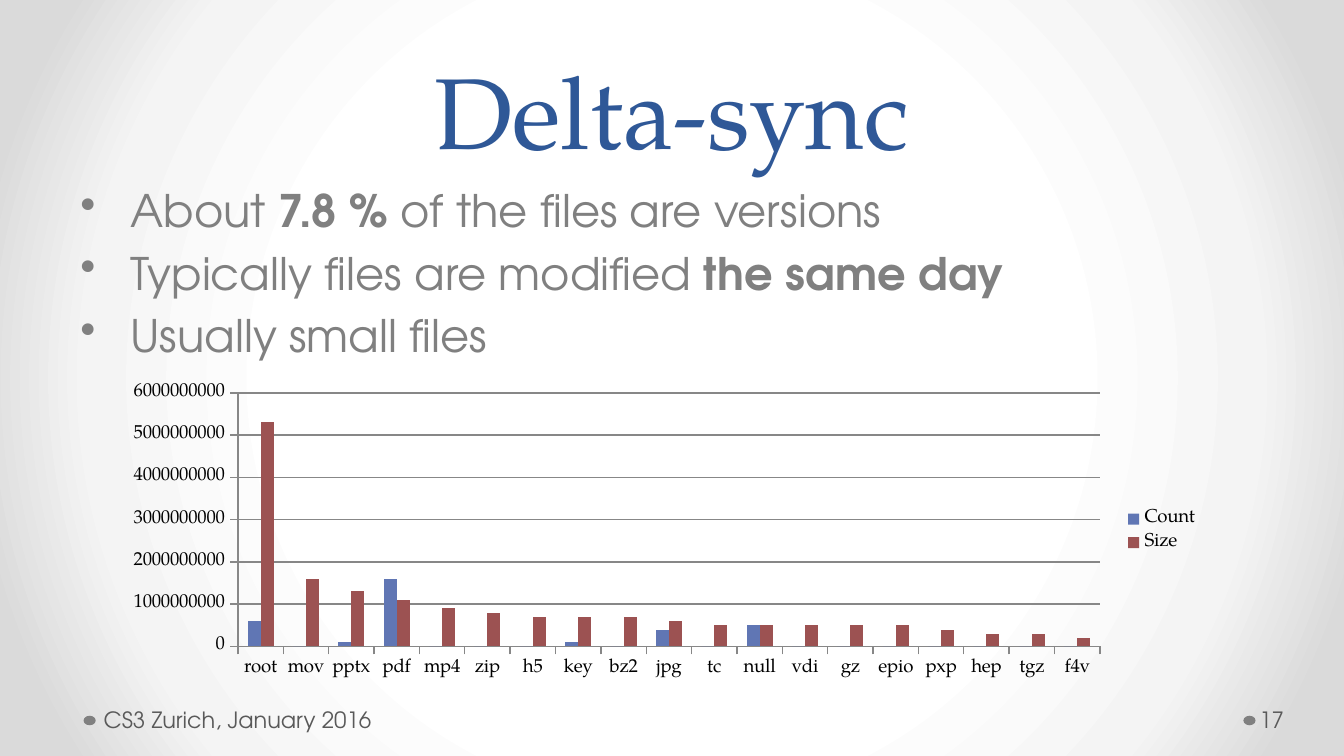
from dataclasses import dataclass

from lxml.etree import SubElement
from pptx import Presentation
from pptx.chart.data import CategoryChartData
from pptx.dml.color import RGBColor
from pptx.enum.chart import XL_CHART_TYPE, XL_LEGEND_POSITION, XL_TICK_MARK
from pptx.enum.shapes import MSO_SHAPE
from pptx.enum.text import MSO_ANCHOR, PP_ALIGN
from pptx.oxml.ns import qn
from pptx.util import Cm, Pt

COLORS = {
    "title": "2F5897", "body": "808080", "footer": "595959", "axis": "878787",
    "black": "000000", "count": "6076B4", "size": "9C5252",
}
BACKGROUND_STOPS = [(50, "FFFFFF"), (76, "F4F4F4"), (92, "DADADA")]
SERIF, SANS = "TeX Gyre Pagella", "TeX Gyre Adventor"
INDENT = Cm(0.95)

# Each bullet is a list of (text, bold) pieces.
BULLETS = [
    [("About ", False), ("7.8 %", True), (" of the files are versions", False)],
    [("Typically files are modified ", False), ("the same day", True)],
    [("Usually small files", False)],
]


@dataclass(frozen=True)
class Box:
    left: float
    top: float
    width: float
    height: float

    def lengths(self):
        return Cm(self.left), Cm(self.top), Cm(self.width), Cm(self.height)


@dataclass(frozen=True)
class FileType:
    """Count and size of one file type, in units of 100 million."""
    name: str
    count: int
    size: int


FILE_TYPES = [
    FileType("root", 6, 53), FileType("mov", 0, 16), FileType("pptx", 1, 13),
    FileType("pdf", 16, 11), FileType("mp4", 0, 9), FileType("zip", 0, 8),
    FileType("h5", 0, 7), FileType("key", 1, 7), FileType("bz2", 0, 7),
    FileType("jpg", 4, 6), FileType("tc", 0, 5), FileType("null", 5, 5),
    FileType("vdi", 0, 5), FileType("gz", 0, 5), FileType("epio", 0, 5),
    FileType("pxp", 0, 4), FileType("hep", 0, 3), FileType("tgz", 0, 3),
    FileType("f4v", 0, 2),
]
VALUE_UNIT = 100_000_000


def rgb(name: str) -> RGBColor:
    return RGBColor.from_string(COLORS[name])


def paint_background(slide) -> None:
    """Fill the background with a radial gradient around the centre."""
    slide.background.fill.gradient()
    gradient = next(slide.element.iter(qn("a:gradFill")))
    for child in list(gradient):
        gradient.remove(child)
    stops = SubElement(gradient, qn("a:gsLst"))
    for position, color in BACKGROUND_STOPS:
        stop = SubElement(stops, qn("a:gs"), pos=str(position * 1000))
        SubElement(stop, qn("a:srgbClr"), val=color)
    circle = SubElement(gradient, qn("a:path"), {"path": "circle"})
    SubElement(circle, qn("a:fillToRect"),
               {side: "50000" for side in ("l", "t", "r", "b")})


def add_bullet(paragraph) -> None:
    properties = paragraph._p.get_or_add_pPr()
    properties.set("marL", str(INDENT))
    properties.set("indent", str(-INDENT))
    SubElement(properties, qn("a:buChar"), char="•")


def add_text(slide, box: Box, paragraphs: list, *, size: int, font: str,
             color: str, align=PP_ALIGN.LEFT, anchor=MSO_ANCHOR.TOP,
             margins=(0.25, 0.25), line_spacing=None, space_before=None,
             bullets=False) -> None:
    """Add a text box; paragraphs are lists of (text, bold) pieces."""
    frame = slide.shapes.add_textbox(*box.lengths()).text_frame
    frame.word_wrap = True
    frame.vertical_anchor = anchor
    frame.margin_left, frame.margin_right = (Cm(margin) for margin in margins)
    for index, pieces in enumerate(paragraphs):
        paragraph = frame.add_paragraph() if index else frame.paragraphs[0]
        paragraph.alignment = align
        paragraph.line_spacing = line_spacing
        paragraph.space_before = space_before
        if bullets:
            add_bullet(paragraph)
        for text, bold in pieces:
            run = paragraph.add_run()
            run.text = text
            run.font.size, run.font.name, run.font.bold = Pt(size), font, bold
            run.font.color.rgb = rgb(color)


def add_dot(slide, left: float) -> None:
    box = Box(left, 13.53, 0.23, 0.18)
    shape = slide.shapes.add_shape(MSO_SHAPE.OVAL, *box.lengths())
    shape.shadow.inherit = False
    shape.fill.solid()
    shape.fill.fore_color.rgb = rgb("body")
    shape.line.fill.background()


def add_file_chart(slide, box: Box) -> None:
    data = CategoryChartData(number_format="0")
    data.categories = [file_type.name for file_type in FILE_TYPES]
    data.add_series("Count", [item.count * VALUE_UNIT for item in FILE_TYPES])
    data.add_series("Size", [item.size * VALUE_UNIT for item in FILE_TYPES])
    chart = slide.shapes.add_chart(
        XL_CHART_TYPE.COLUMN_CLUSTERED, *box.lengths(), data).chart
    chart.has_title = False
    chart.font.size, chart.font.name = Pt(10), SERIF
    chart.font.color.rgb = rgb("black")
    chart.has_legend = True
    chart.legend.position = XL_LEGEND_POSITION.RIGHT
    chart.legend.include_in_layout = False

    plot = chart.plots[0]
    plot.gap_width, plot.overlap = 150, 0
    plot.vary_by_categories = False
    for series, color in zip(plot.series, ("count", "size")):
        series.format.fill.solid()
        series.format.fill.fore_color.rgb = rgb(color)

    value_axis = chart.value_axis
    value_axis.minimum_scale, value_axis.maximum_scale = 0, 60 * VALUE_UNIT
    value_axis.major_unit = 10 * VALUE_UNIT
    value_axis.has_major_gridlines = True
    for axis in (chart.category_axis, value_axis):
        axis.major_tick_mark = XL_TICK_MARK.OUTSIDE
        axis.minor_tick_mark = XL_TICK_MARK.NONE
    for line in (chart.category_axis.format.line, value_axis.format.line,
                 value_axis.major_gridlines.format.line):
        line.color.rgb = rgb("axis")
        line.width = Pt(0.75)


def main() -> None:
    presentation = Presentation()
    presentation.slide_width, presentation.slide_height = Cm(25.4), Cm(14.29)
    slide = presentation.slides.add_slide(presentation.slide_layouts[6])
    paint_background(slide)
    for left in (23.5, 1.58):
        add_dot(slide, left)
    add_text(slide, Box(1.27, 0, 22.86, 3.33), [[("Delta-sync", False)]],
             size=54, font=SERIF, color="title", align=PP_ALIGN.CENTER,
             anchor=MSO_ANCHOR.BOTTOM, line_spacing=Pt(58))
    add_text(slide, Box(1.27, 3.33, 22.86, 9.42), BULLETS, size=24, font=SANS,
             color="body", space_before=Pt(4.8), bullets=True)
    footer = {"size": 12, "font": SANS, "color": "footer",
              "anchor": MSO_ANCHOR.MIDDLE}
    add_text(slide, Box(1.83, 13.23, 7.9, 0.76),
             [[("CS3 Zurich, January 2016", False)]],
             margins=(0.13, 0.25), **footer)
    add_text(slide, Box(23.72, 13.23, 1.55, 0.76), [[("17", False)]],
             margins=(0.08, 0.13), **footer)
    add_file_chart(slide, Box(2.11, 7.14, 20.8, 5.79))
    presentation.save("out.pptx")


if __name__ == "__main__":
    main()
